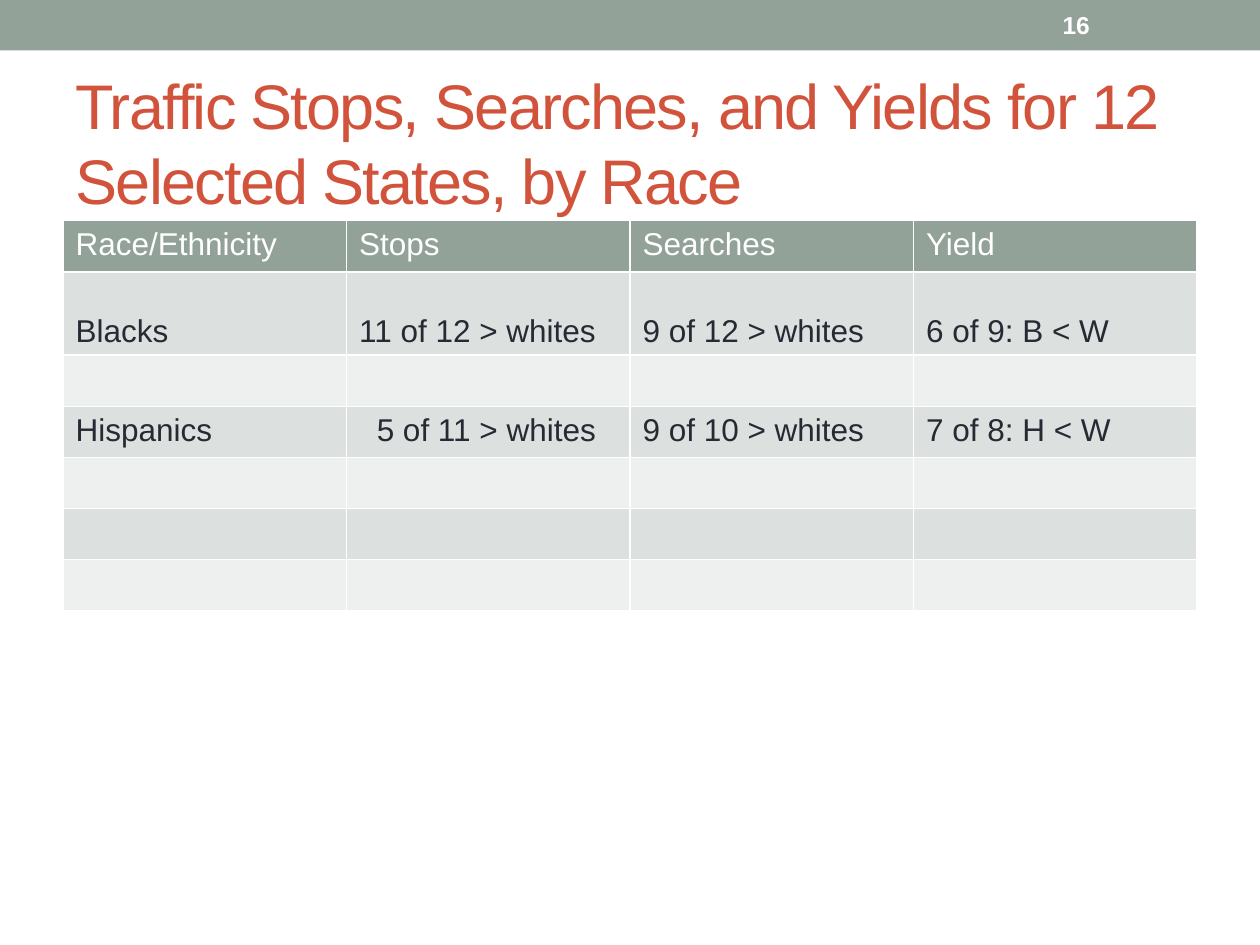
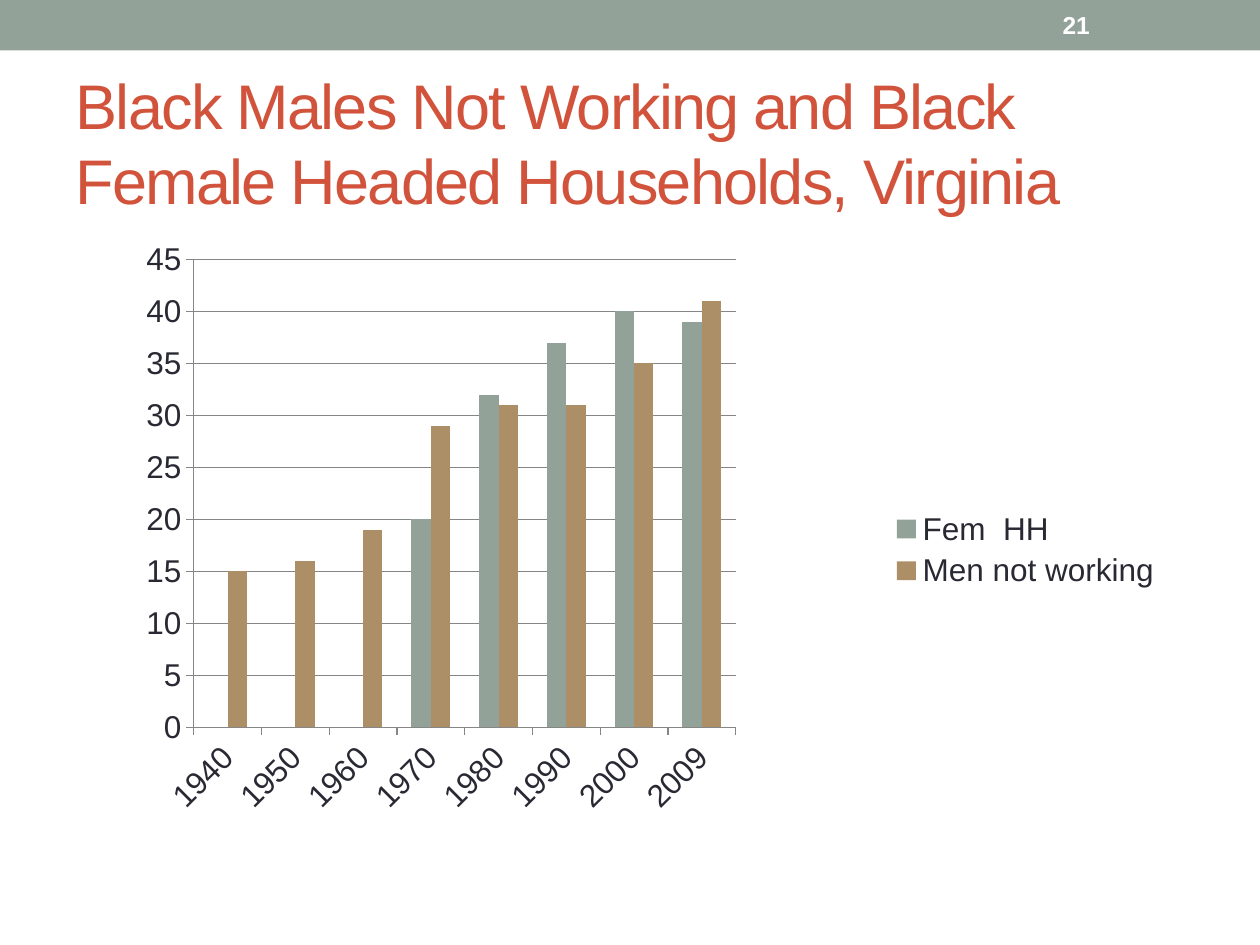
from lxml import etree
from pptx import Presentation
from pptx.chart.data import CategoryChartData
from pptx.dml.color import RGBColor
from pptx.enum import chart as ch, shapes, text
from pptx.oxml import ns, parse_xml
from pptx.util import Cm, Pt

COLORS = {
    "white": "FFFFFF",
    "sage": "93A299",
    "tan": "AD8F67",
    "title": "D2533C",
    "ink": "292934",
    "row_dark": "DCE0DE",
    "row_light": "EEF0EF",
    "axis": "868686",
}
FONT = "Arial"
TITLE_ONLY = 5


def rgb(name):
    return RGBColor.from_string(COLORS[name])


class Deck:
    """Holds the shared style and the slide being built."""

    def __init__(self):
        self.prs = Presentation()
        self.prs.slide_width, self.prs.slide_height = Cm(25.4), Cm(19.05)
        self.s = None

    def style(self, font, size, color, bold=False):
        font.name, font.size, font.bold = FONT, Pt(size), bold
        font.color.rgb = rgb(color)

    def slide(self, title, number):
        """Start a slide with the band, title and page number."""
        self.s = self.prs.slides.add_slide(self.prs.slide_layouts[TITLE_ONLY])
        self.band()
        self.title(title)
        self.page_number(number)

    def band(self):
        sp = self.s.shapes.add_shape(shapes.MSO_SHAPE.RECTANGLE, 0, 0,
                                     self.prs.slide_width, Cm(1.02))
        sp.shadow.inherit = False
        sp.fill.solid()
        sp.fill.fore_color.rgb = rgb("sage")
        sp.line.fill.background()

    def title(self, words):
        sp = self.s.shapes.title
        sp.left, sp.top, sp.width, sp.height = Cm(1.27), Cm(1.49), Cm(22.86), Cm(2.74)
        tf = sp.text_frame
        tf.text = words
        tf.auto_size = text.MSO_AUTO_SIZE.NONE
        tf.vertical_anchor = text.MSO_ANCHOR.MIDDLE
        p = tf.paragraphs[0]
        p.alignment = text.PP_ALIGN.LEFT
        p.line_spacing = Pt(43)
        r = p.runs[0]
        self.style(r.font, 36, "title")
        r.font._element.set("spc", "-100")

    def page_number(self, number):
        sp = self.s.shapes.add_textbox(Cm(21.17), Cm(0.05), Cm(2.97), Cm(0.91))
        tf = sp.text_frame
        tf.word_wrap = True
        tf.vertical_anchor = text.MSO_ANCHOR.MIDDLE
        tf.text = str(number)
        self.style(tf.paragraphs[0].runs[0].font, 14, "white", bold=True)

    def table(self, rows, heights):
        """Add a banded table whose first row is the header."""
        frame = self.s.shapes.add_table(len(rows), len(rows[0]), Cm(1.27), Cm(4.45),
                                        Cm(22.86), sum(heights))
        table = frame.table
        for i, (row, height) in enumerate(zip(rows, heights)):
            table.rows[i].height = height
            fill = "sage" if i == 0 else "row_dark" if i % 2 else "row_light"
            for j, words in enumerate(row):
                self.cell(table.cell(i, j), words, fill, "white" if i == 0 else "ink")
        return table

    def cell(self, cell, words, fill, color):
        cell.text = words
        p = cell.text_frame.paragraphs[0]
        self.style(p.font, 18, color)
        for r in p.runs:
            self.style(r.font, 18, color)
        cell.fill.solid()
        cell.fill.fore_color.rgb = rgb(fill)
        props = cell._tc.get_or_add_tcPr()
        for i, side in enumerate("LRTB"):
            props.insert(i, parse_xml(
                f'<a:ln{side} {ns.nsdecls("a")} w="{Pt(1)}"><a:solidFill>'
                f'<a:srgbClr val="{COLORS["white"]}"/></a:solidFill></a:ln{side}>'))

    def column_chart(self, categories, series, plot, legend):
        """Add clustered columns; series maps a name to (values, color)."""
        data = CategoryChartData()
        data.categories = categories
        for name, (values, _) in series.items():
            data.add_series(name, values)
        chart = self.s.shapes.add_chart(ch.XL_CHART_TYPE.COLUMN_CLUSTERED, Cm(1.07),
                                        Cm(4.65), Cm(22.86), Cm(12.57), data).chart
        self.style(chart.font, 18, "ink")
        chart.has_title = False
        chart.has_legend = True
        chart.legend.position = ch.XL_LEGEND_POSITION.RIGHT
        chart.legend.include_in_layout = False
        columns = chart.plots[0]
        columns.gap_width, columns.overlap = 150, 0
        columns.vary_by_categories = False
        for ser, (_, color) in zip(columns.series, series.values()):
            ser.format.fill.solid()
            ser.format.fill.fore_color.rgb = rgb(color)
            ser.invert_if_negative = False
        self.axes(chart)
        area = chart._chartSpace.chart.plotArea
        self.place(area, 0, plot, [("layoutTarget", "inner")])
        self.place(chart.legend._element, 1, legend)

    def axes(self, chart):
        years, values = chart.category_axis, chart.value_axis
        values.minimum_scale, values.maximum_scale, values.major_unit = 0, 45, 5
        values.has_major_gridlines = True
        for part in (years, values, values.major_gridlines):
            part.format.line.color.rgb = rgb("axis")
            part.format.line.width = Pt(0.75)
        for axis in (years, values):
            axis.major_tick_mark = ch.XL_TICK_MARK.OUTSIDE
            self.style(axis.tick_labels.font, 18, "ink")
        body = years._element.find(ns.qn("c:txPr")).find(ns.qn("a:bodyPr"))
        body.set("rot", str(-45 * 60000))
        body.set("vert", "horz")

    def place(self, element, index, percents, settings=()):
        """Fix a chart part at x, y (and width, height) in percent of the chart."""
        for old in element.findall(ns.qn("c:layout")):
            element.remove(old)
        layout = etree.Element(ns.qn("c:layout"))
        manual = etree.SubElement(layout, ns.qn("c:manualLayout"))
        modes = [("xMode", "edge"), ("yMode", "edge")]
        sizes = [(tag, percent / 100) for tag, percent in zip("xywh", percents)]
        for tag, value in [*settings, *modes, *sizes]:
            etree.SubElement(manual, ns.qn(f"c:{tag}")).set("val", str(value))
        element.insert(index, layout)


def main():
    deck = Deck()

    deck.slide("Traffic Stops, Searches, and Yields for 12 Selected States, by Race", 16)
    blank = [""] * 4
    rows = [
        ["Race/Ethnicity", "Stops", "Searches", "Yield"],
        ["Blacks", "11 of 12 > whites", "9 of 12 > whites", "6 of 9: B < W"],
        blank,
        ["Hispanics", "5 of 11 > whites", "9 of 10 > whites", "7 of 8: H < W"],
        blank, blank, blank,
    ]
    heights = [Cm(1.03)] * len(rows)
    heights[1] = Cm(1.68)
    table = deck.table(rows, heights)
    for cell in table.rows[1].cells:
        cell.vertical_anchor = text.MSO_ANCHOR.BOTTOM
    table.cell(3, 1).margin_left = Cm(0.61)

    deck.slide("Black Males Not Working and Black Female Headed Households, Virginia", 21)
    deck.column_chart(
        ["1940", "1950", "1960", "1970", "1980", "1990", "2000", "2009"],
        {
            "Fem  HH": ([None, None, None, 20, 32, 37, 40, 39], "sage"),
            "Men not working": ([15, 16, 19, 29, 31, 31, 35, 41], "tan"),
        },
        plot=(12.4, 4.6, 47.8, 75.1), legend=(73.5, 44))

    deck.prs.save("out.pptx")


if __name__ == "__main__":
    main()
